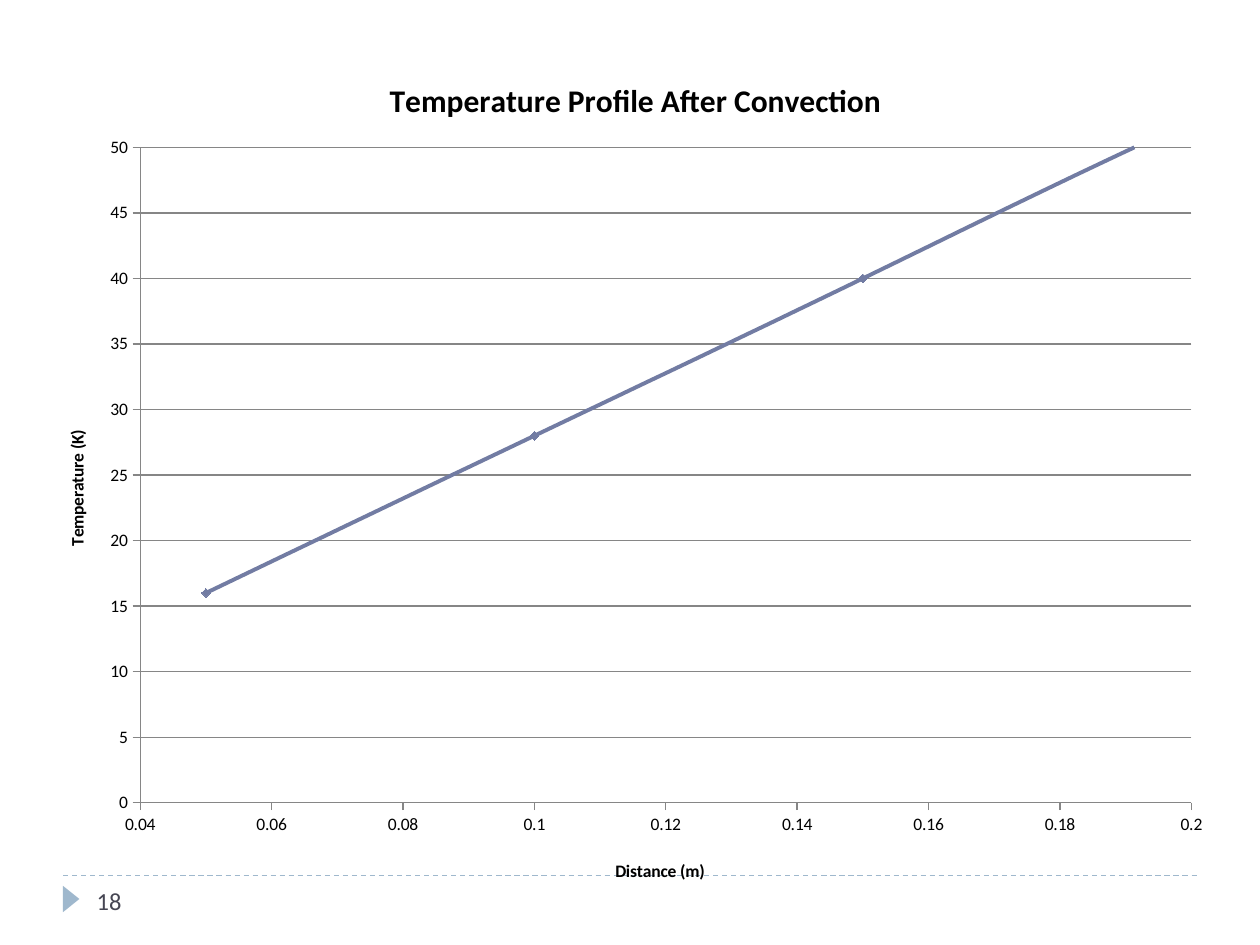
from lxml.etree import SubElement
from pptx import Presentation
from pptx.chart.data import XyChartData
from pptx.dml.color import RGBColor
from pptx.enum.chart import XL_CHART_TYPE, XL_MARKER_STYLE, XL_TICK_MARK
from pptx.enum.dml import MSO_LINE
from pptx.enum.shapes import MSO_CONNECTOR, MSO_SHAPE
from pptx.enum.text import MSO_ANCHOR
from pptx.oxml.ns import qn
from pptx.util import Pt

FONT = "Calibri"
COLORS = {
    "accent": "9FB8CD",
    "page": "464653",
    "curve": "727CA3",
    "axis": "868686",
    "text": "000000",
}
TEMPERATURES = [16, 28, 40, 52, 63, 75, 87, 99, 111, 123, 135, 147,
                159, 171, 184, 196, 209, 221, 234, 247, 260, 273, 286, 300]
STEP = 0.05  # metres between two readings


def color(name):
    return RGBColor.from_string(COLORS[name])


def style_font(font, size, name, bold=False):
    font.name, font.size, font.bold = FONT, Pt(size), bold
    font.color.rgb = color(name)


def style_line(line, name, width):
    line.color.rgb = color(name)
    line.width = Pt(width)


def place(parent, index, **fractions):
    """Fix a chart part's position, in fractions of the chart area."""
    layout = parent.find(qn("c:layout"))
    if layout is None:
        layout = parent.makeelement(qn("c:layout"))
        parent.insert(index, layout)
    manual = SubElement(layout, qn("c:manualLayout"))
    settings = {"xMode": "edge", "yMode": "edge", **fractions}
    if "w" in fractions:
        settings = {"layoutTarget": "inner", **settings}
    for tag, value in settings.items():
        SubElement(manual, qn(f"c:{tag}")).set("val", str(value))


def set_title(title, text, size, x, y):
    paragraph = title.text_frame.paragraphs[0]
    paragraph.text = text
    style_font(paragraph.font, size, "text", bold=True)
    place(title._element, 1, x=x, y=y)


def style_axis(axis, low, high, unit, number_format):
    axis.minimum_scale, axis.maximum_scale, axis.major_unit = low, high, unit
    axis.major_tick_mark = XL_TICK_MARK.OUTSIDE
    axis.minor_tick_mark = XL_TICK_MARK.NONE
    axis.tick_labels.number_format = number_format
    axis.tick_labels.number_format_is_linked = False
    style_font(axis.tick_labels.font, 10, "text")
    style_line(axis.format.line, "axis", 0.75)


def add_footer(slide):
    # Dashed rule
    rule = slide.shapes.add_connector(
        MSO_CONNECTOR.STRAIGHT, Pt(36), Pt(500.4), Pt(684), Pt(500.4))
    style_line(rule.line, "accent", 0.75)
    rule.line.dash_style = MSO_LINE.DASH
    SubElement(rule._element.spPr, qn("a:effectLst"))

    # Page pointer
    pointer = slide.shapes.add_shape(
        MSO_SHAPE.ISOSCELES_TRIANGLE, Pt(33.1), Pt(509), Pt(15.1), Pt(9.4))
    pointer.rotation = 90
    pointer.shadow.inherit = False
    pointer.fill.solid()
    pointer.fill.fore_color.rgb = color("accent")
    pointer.line.fill.background()

    # Page number
    page = slide.shapes.add_textbox(Pt(48.2), Pt(500.4), Pt(156), Pt(28.8))
    page.text_frame.word_wrap = True
    page.text_frame.vertical_anchor = MSO_ANCHOR.MIDDLE
    paragraph = page.text_frame.paragraphs[0]
    paragraph.text = "18"
    style_font(paragraph.font, 14, "page")


def add_temperature_chart(slide):
    data = XyChartData()
    readings = data.add_series("Series 1")
    for count, temperature in enumerate(TEMPERATURES, start=1):
        readings.add_data_point(round(count * STEP, 2), temperature)
    chart = slide.shapes.add_chart(
        XL_CHART_TYPE.XY_SCATTER_SMOOTH,
        Pt(18.7), Pt(22.3), Pt(682.6), Pt(495.4), data).chart
    style_font(chart.font, 10, "text")
    chart.has_legend = False
    chart.plots[0].vary_by_categories = False
    place(chart._chartSpace.chart.plotArea, 0, x=0.09, y=0.125, w=0.88, h=0.756)

    # Axes and titles
    distance, temperature = chart.category_axis, chart.value_axis
    style_axis(distance, 0.04, 0.2, 0.02, "General")
    style_axis(temperature, 0, 50, 5, "0")
    distance.has_major_gridlines = False
    temperature.has_major_gridlines = True
    style_line(temperature.major_gridlines.format.line, "axis", 0.75)
    set_title(chart.chart_title, "Temperature Profile After Convection",
              18, 0.294, 0.039)
    set_title(distance.axis_title, "Distance (m)", 10, 0.485, 0.943)
    set_title(temperature.axis_title, "Temperature (K)", 10, 0.025, 0.447)

    # Curve
    curve = chart.plots[0].series[0]
    style_line(curve.format.line, "curve", 2.25)
    curve._element.find(qn("c:smooth")).set("val", "1")
    curve.marker.style = XL_MARKER_STYLE.DIAMOND
    curve.marker.size = 5
    curve.marker.format.fill.solid()
    curve.marker.format.fill.fore_color.rgb = color("curve")
    style_line(curve.marker.format.line, "curve", 0.75)


def main():
    deck = Presentation()
    deck.slide_width, deck.slide_height = Pt(720), Pt(540)
    slide = deck.slides.add_slide(deck.slide_layouts[6])
    add_footer(slide)
    add_temperature_chart(slide)
    deck.save("out.pptx")


if __name__ == "__main__":
    main()
